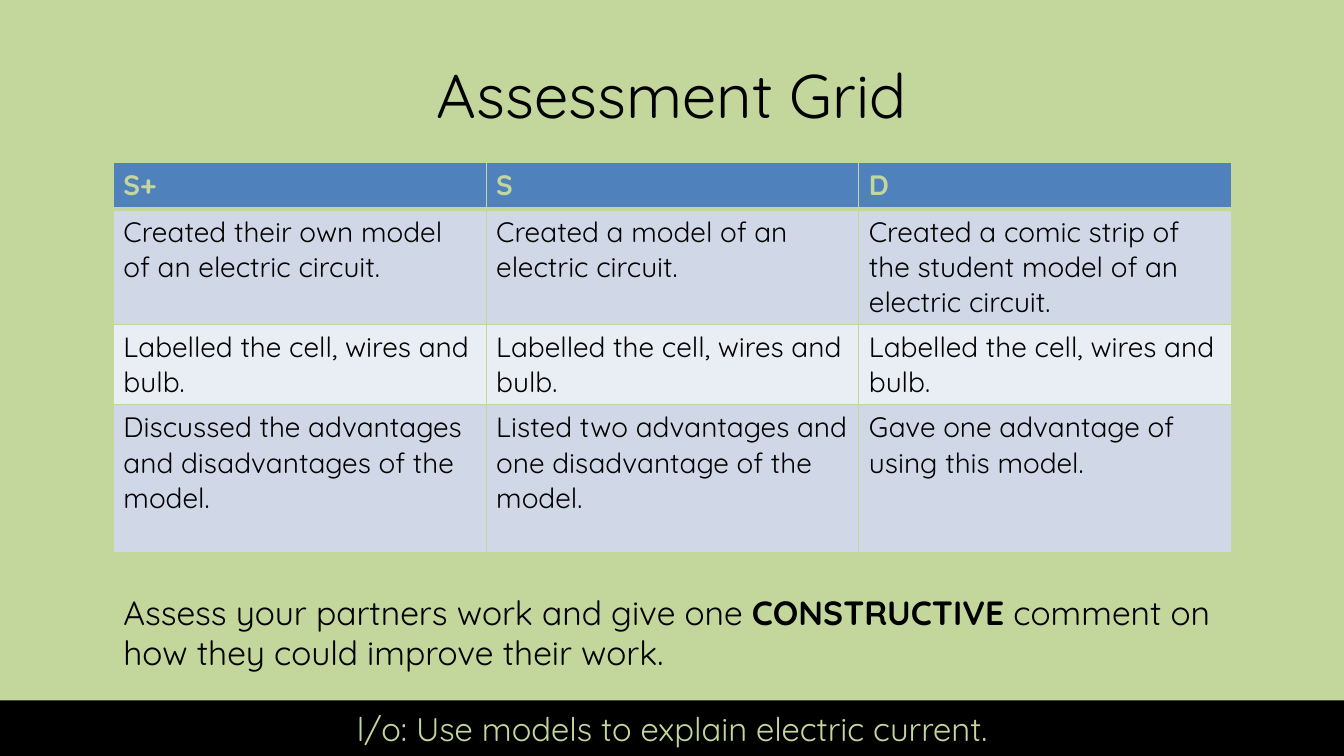
from lxml import etree
from pptx import Presentation
from pptx import util as u
from pptx.dml.color import RGBColor
from pptx.enum import shapes, text
from pptx.oxml import ns

PX = 9525
FONT = "Quicksand"
BLACK = RGBColor(0x00, 0x00, 0x00)
GREEN = RGBColor(0xC3, 0xD6, 0x9B)
BLUE = RGBColor(0x4F, 0x81, 0xBD)
BAND = RGBColor(0xD0, 0xD8, 0xE8)
PALE = RGBColor(0xE9, 0xED, 0xF4)
FILLS = [BLUE, BAND, PALE, BAND]
HEIGHTS = [44, 109, 76, 141]
LABEL = "Labelled the cell, wires and bulb."
GRID = [
    ["S+", "S", "D"],
    ["Created their own model of an electric circuit.",
     "Created a model of an electric circuit.",
     "Created a comic strip of the student model of an electric circuit."],
    [LABEL] * 3,
    ["Discussed the advantages and disadvantages of the model.",
     "Listed two advantages and one disadvantage of the model.",
     "Gave one advantage of using this model."],
]


def px(*sizes):
    """Turn pixel lengths into EMU."""
    return [u.Emu(size * PX) for size in sizes]


def write(frame, *parts, size=20, color=BLACK, bold=False, align=None, anchor=None):
    """Write one paragraph; every second part is in the opposite weight."""
    frame.word_wrap = True
    frame.auto_size = text.MSO_AUTO_SIZE.NONE
    if anchor is not None:
        frame.vertical_anchor = anchor
    para = frame.paragraphs[0]
    para.alignment = align
    for i, part in enumerate(parts):
        run = para.add_run()
        run.text = part
        font = run.font
        font.name, font.size = FONT, u.Pt(size)
        font.bold = bold != (i % 2 == 1)
        font.color.rgb = color


def edge(cell, base):
    """Draw the cell borders, with the bottom one at its own width."""
    props = cell._tc.get_or_add_tcPr()
    for i, (side, width) in enumerate([("L", 1), ("R", 1), ("T", 1), ("B", base)]):
        line = etree.Element(ns.qn(f"a:ln{side}"), w=str(u.Pt(width)))
        fill = etree.SubElement(line, ns.qn("a:solidFill"))
        etree.SubElement(fill, ns.qn("a:srgbClr"), val=str(GREEN))
        props.insert(i, line)


def head(slide, box):
    """Place the title."""
    title = slide.shapes.title
    title.left, title.top, title.width, title.height = px(*box)
    write(title.text_frame, "Assessment Grid", size=44,
          align=text.PP_ALIGN.CENTER, anchor=text.MSO_ANCHOR.MIDDLE)


def grid(slide, box):
    """Place the assessment table."""
    table = slide.shapes.add_table(len(GRID), len(GRID[0]), *px(*box)).table
    table.horz_banding = False
    for col in table.columns:
        col.width = px(box[2] // len(GRID[0]))[0]
    for r, words in enumerate(GRID):
        table.rows[r].height = px(HEIGHTS[r])[0]
        top = r == 0
        for c, word in enumerate(words):
            cell = table.cell(r, c)
            cell.fill.solid()
            cell.fill.fore_color.rgb = FILLS[r]
            edge(cell, 3 if top else 1)
            write(cell.text_frame, word, color=GREEN if top else BLACK, bold=top)


def task(slide, box):
    """Place the task below the table."""
    frame = slide.shapes.add_textbox(*px(*box)).text_frame
    write(frame, "Assess your partners work and give one ", "CONSTRUCTIVE",
          " comment on how they could improve their work.", size=24)


def foot(slide, box):
    """Place the bar with the learning objective."""
    bar = slide.shapes.add_shape(shapes.MSO_SHAPE.RECTANGLE, *px(*box))
    bar.shadow.inherit = False
    bar.fill.solid()
    bar.fill.fore_color.rgb = BLACK
    bar.line.fill.background()
    write(bar.text_frame, "l/o: Use models to explain electric current.", size=23.4,
          color=GREEN, align=text.PP_ALIGN.CENTER, anchor=text.MSO_ANCHOR.MIDDLE)


def main():
    """Build and save the slide."""
    deck = Presentation()
    deck.slide_width, deck.slide_height = px(1280, 720)
    slide = deck.slides.add_slide(deck.slide_layouts[5])
    back = slide.background.fill
    back.solid()
    back.fore_color.rgb = GREEN
    head(slide, (64, 29, 1152, 120))
    grid(slide, (108, 155, 1065, sum(HEIGHTS)))
    task(slide, (108, 559, 1065, 87))
    foot(slide, (0, 667, 1280, 53))
    deck.save("out.pptx")


if __name__ == "__main__":
    main()
